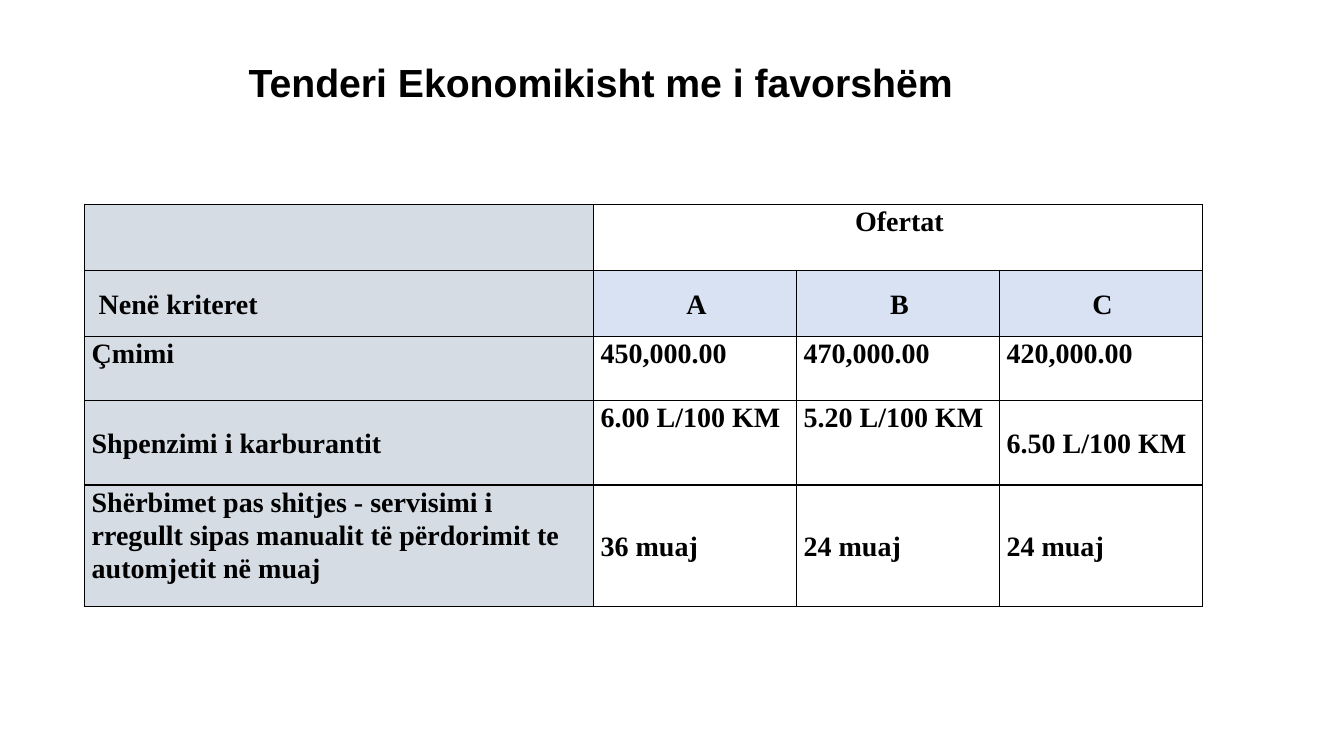
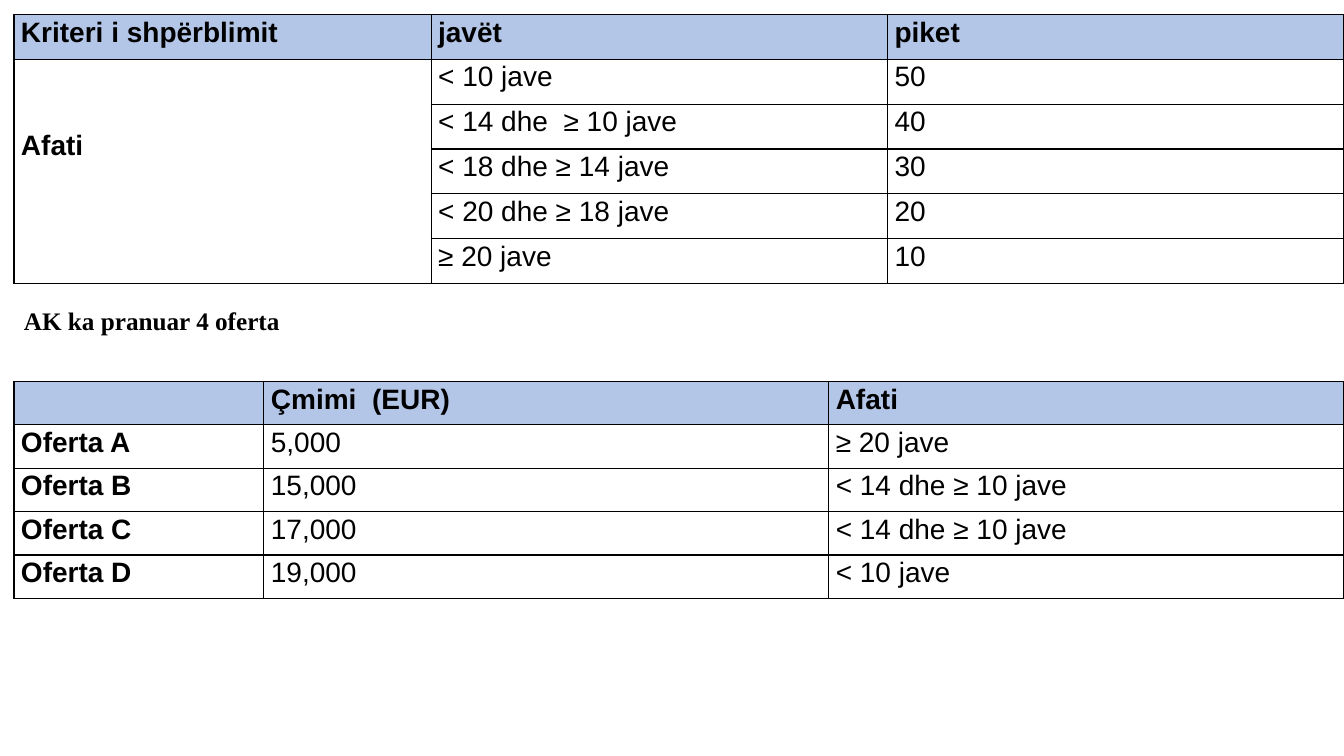
from lxml import etree
from pptx import Presentation
from pptx.dml.color import RGBColor
from pptx.enum.text import MSO_ANCHOR, PP_ALIGN
from pptx.oxml.ns import qn
from pptx.util import Pt

CENTER = PP_ALIGN.CENTER
MIDDLE = MSO_ANCHOR.MIDDLE

COLORS = {
    "ink": "000000",
    "criteria": "D5DCE4",
    "offer": "D9E2F3",
    "header": "B4C6E7",
}
SANS, SERIF = "Arial", "Times New Roman"
BLANK_LAYOUT = 6
TABLE_TEXT_SIZE = 20
LINE_SPACING = 1.07


def color(name):
    return RGBColor.from_string(COLORS[name])


def style_text(para, font, size, bold=True):
    for span in para.runs:
        span.font.name = font
        span.font.size = Pt(size)
        span.font.bold = bold
        span.font.color.rgb = color("ink")


def add_text(page, box, text, font, size):
    left, top, width, height = box
    shape = page.shapes.add_textbox(Pt(left), Pt(top), Pt(width), Pt(height))
    shape.text_frame.word_wrap = True
    shape.text_frame.text = text
    para = shape.text_frame.paragraphs[0]
    style_text(para, font, size)
    return para


def add_borders(cell):
    properties = cell._tc.get_or_add_tcPr()
    for side in ("a:lnL", "a:lnR", "a:lnT", "a:lnB"):
        line = etree.SubElement(properties, qn(side), w=str(Pt(1)))
        fill = etree.SubElement(line, qn("a:solidFill"))
        etree.SubElement(fill, qn("a:srgbClr"), val=COLORS["ink"])


def fill_cell(cell, name):
    cell.fill.solid()
    cell.fill.fore_color.rgb = color(name)


def add_grid(page, origin, widths, heights, texts, font, is_bold):
    """Add a bordered, unfilled table; is_bold(row, column) picks the weight."""
    left, top = origin
    frame = page.shapes.add_table(
        len(heights), len(widths), Pt(left), Pt(top),
        Pt(sum(widths)), Pt(sum(heights)))
    table = frame.table
    table.first_row = table.horz_banding = False
    for column, width in zip(table.columns, widths):
        column.width = Pt(width)
    for row, height in zip(table.rows, heights):
        row.height = Pt(height)
    for r, row_texts in enumerate(texts):
        for c, text in enumerate(row_texts):
            cell = table.cell(r, c)
            add_borders(cell)
            cell.fill.background()
            cell.margin_left, cell.margin_right = Pt(5), Pt(3)
            cell.margin_top = cell.margin_bottom = Pt(0)
            if text:
                cell.text_frame.text = text
                para = cell.text_frame.paragraphs[0]
                para.line_spacing = LINE_SPACING
                style_text(para, font, TABLE_TEXT_SIZE, is_bold(r, c))
    return table


def add_offer_comparison(page, origin):
    texts = [
        ["", "Ofertat", "", ""],
        ["Nenë kriteret", "A", "B", "C"],
        ["Çmimi", "450,000.00", "470,000.00", "420,000.00"],
        ["Shpenzimi i karburantit",
         "6.00 L/100 KM", "5.20 L/100 KM", "6.50 L/100 KM"],
        ["Shërbimet pas shitjes - servisimi i rregullt sipas manualit "
         "të përdorimit te automjetit në muaj",
         "36 muaj", "24 muaj", "24 muaj"],
    ]
    table = add_grid(page, origin, [363.5, 145, 145, 145],
                     [47, 47.5, 45.5, 60.5, 87], texts, SERIF,
                     lambda r, c: True)
    for r in range(len(texts)):
        fill_cell(table.cell(r, 0), "criteria")
    for c in range(1, 4):
        fill_cell(table.cell(1, c), "offer")
        for r in (0, 1):
            table.cell(r, c).text_frame.paragraphs[0].alignment = CENTER
    middle_cells = [(1, 0), (1, 1), (1, 2), (1, 3), (3, 0), (3, 3),
                    (4, 1), (4, 2), (4, 3)]
    for r, c in middle_cells:
        table.cell(r, c).vertical_anchor = MIDDLE
    table.cell(1, 0).margin_left = Pt(10)
    table.cell(0, 1).merge(table.cell(0, 3))


def add_headed_grid(page, origin, widths, row_height, texts):
    """Add a table with a tinted header row and a bold first column."""
    table = add_grid(page, origin, widths, [row_height] * len(texts), texts,
                     SANS, lambda r, c: r == 0 or c == 0)
    for c in range(len(widths)):
        fill_cell(table.cell(0, c), "header")
    return table


def add_deadline_points(page, origin):
    texts = [
        ["Kriteri i shpërblimit", "javët", "piket"],
        ["Afati", "< 10 jave", "50"],
        ["", "< 14 dhe  ≥ 10 jave", "40"],
        ["", "< 18 dhe ≥ 14 jave", "30"],
        ["", "< 20 dhe ≥ 18 jave", "20"],
        ["", "≥ 20 jave", "10"],
    ]
    table = add_headed_grid(page, origin, [298, 326, 326], 32, texts)
    deadline = table.cell(1, 0)
    deadline.merge(table.cell(5, 0))
    deadline.margin_top = Pt(49)


def add_received_offers(page, origin):
    texts = [
        ["", "Çmimi  (EUR)", "Afati"],
        ["Oferta A", "5,000", "≥ 20 jave"],
        ["Oferta B", "15,000", "< 14 dhe ≥ 10 jave"],
        ["Oferta C", "17,000", "< 14 dhe ≥ 10 jave"],
        ["Oferta D", "19,000", "< 10 jave"],
    ]
    add_headed_grid(page, origin, [178.5, 403.5, 368], 31, texts)


def build_tender_page(page):
    add_offer_comparison(page, (60.5, 146))
    add_text(page, (170.5, 38, 604, 41),
             "Tenderi Ekonomikisht me i favorshëm", SANS, 28)


def build_scoring_page(page):
    left = 10
    add_deadline_points(page, (left, 10.5))
    add_received_offers(page, (left, 272.5))
    note = add_text(page, (left, 213, 574, 30),
                    "AK ka pranuar 4 oferta", SERIF, 18)
    note.line_spacing = 1.06


def main():
    deck = Presentation()
    deck.slide_width, deck.slide_height = Pt(960), Pt(540)
    for build in (build_tender_page, build_scoring_page):
        build(deck.slides.add_slide(deck.slide_layouts[BLANK_LAYOUT]))
    deck.save("out.pptx")


if __name__ == "__main__":
    main()
